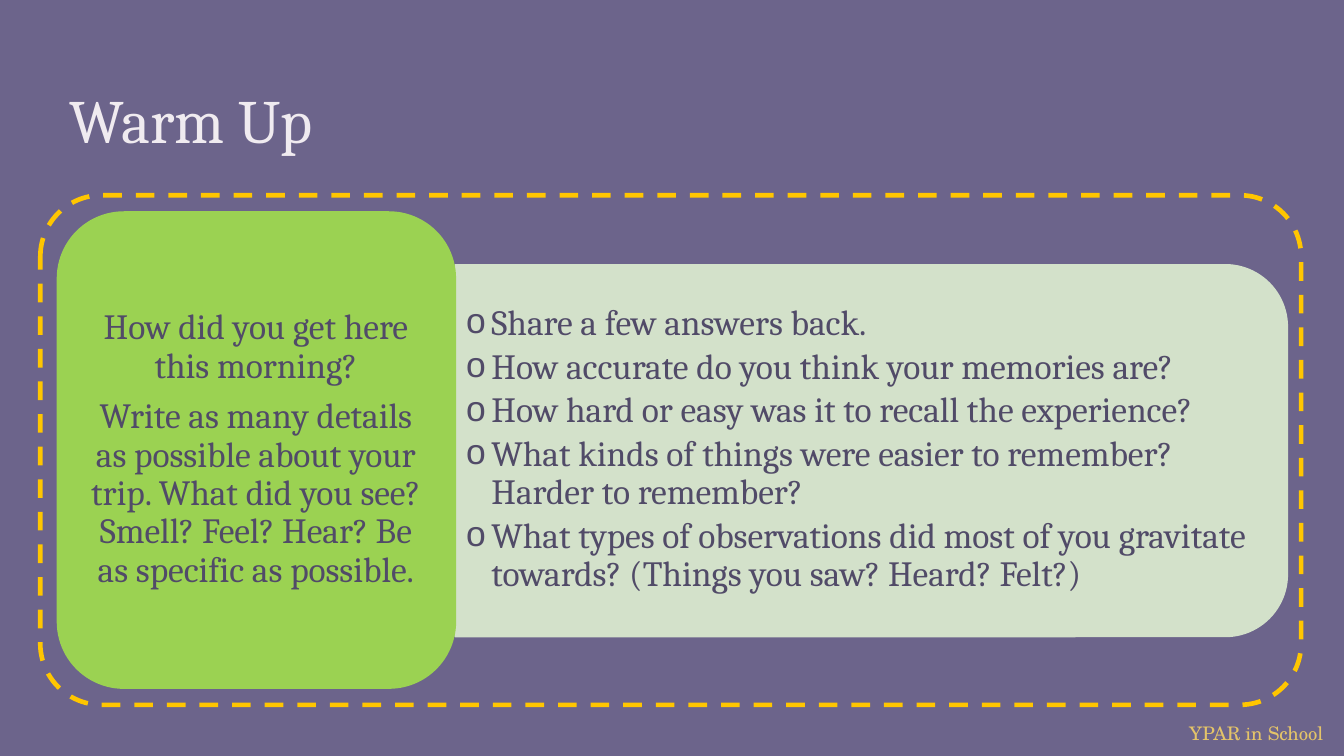
from lxml.etree import SubElement
from pptx import Presentation
from pptx.dml.color import RGBColor
from pptx.enum.dml import MSO_LINE
from pptx.enum.shapes import MSO_SHAPE
from pptx.enum.text import MSO_ANCHOR, MSO_AUTO_SIZE, PP_ALIGN
from pptx.oxml.ns import qn
from pptx.util import Pt

COLORS = {
    "background": "6C648B",
    "title": "F0EBF0",
    "text": "514B68",
    "prompt": "9BD252",
    "questions": "D3E1CA",
    "frame": "FFC600",
    "footer": "E4C469",
}
PROMPTS = [
    "How did you get here this morning?",
    "Write as many details as possible about your trip. What did you see? "
    "Smell? Feel? Hear? Be as specific as possible.",
]
QUESTIONS = [
    "Share a few answers back.",
    "How accurate do you think your memories are?",
    "How hard or easy was it to recall the experience?",
    "What kinds of things were easier to remember? Harder to remember?",
    "What types of observations did most of you gravitate towards? "
    "(Things you saw? Heard? Felt?)",
]
CARD_PARAGRAPH = {"line_spacing": 0.9, "space_before": Pt(0)}
CARD_INSETS = (5.76, 3.6)


def set_attributes(target, values):
    for name, value in values.items():
        setattr(target, name, value)


def rgb(color):
    return RGBColor.from_string(COLORS[color])


class SlideBuilder:
    def __init__(self, slide, font="Cambria"):
        self.slide = slide
        self.font = font
        fill = slide.background.fill
        fill.solid()
        fill.fore_color.rgb = rgb("background")

    def place(self, shape, box):
        names = ("left", "top", "width", "height")
        set_attributes(shape, dict(zip(names, map(Pt, box))))

    def fill_text(self, shape, lines, size, color, anchor, insets, paragraph_format,
                  space_after=0, font=None, bullet=None, indent=0):
        frame = shape.text_frame
        horizontal, vertical = map(Pt, insets)
        set_attributes(frame, {
            "word_wrap": True, "auto_size": MSO_AUTO_SIZE.NONE,
            "vertical_anchor": anchor,
            "margin_left": horizontal, "margin_right": horizontal,
            "margin_top": vertical, "margin_bottom": vertical,
        })
        for index, line in enumerate(lines):
            paragraph = frame.paragraphs[0] if index == 0 else frame.add_paragraph()
            paragraph.text = line
            set_attributes(paragraph, paragraph_format)
            paragraph.space_after = Pt(space_after)
            if bullet:
                properties = paragraph._p.get_or_add_pPr()
                properties.set("marL", str(Pt(indent)))
                properties.set("indent", str(-Pt(indent)))
                SubElement(properties, qn("a:buChar"), char=bullet)
            set_attributes(paragraph.font, {"name": font or self.font, "size": Pt(size)})
            paragraph.font.color.rgb = rgb(color)

    def add_title(self, text, box):
        title = self.slide.shapes.title
        self.place(title, box)
        self.fill_text(title, [text], 33, "title", MSO_ANCHOR.BOTTOM, (7.2, 7.2),
                       {"alignment": PP_ALIGN.LEFT})

    def add_list(self, lines, box):
        body = self.slide.placeholders[1]
        self.place(body, box)
        body.element.getparent().append(body.element)
        self.fill_text(body, lines, 19, "text", MSO_ANCHOR.MIDDLE, CARD_INSETS,
                       CARD_PARAGRAPH, space_after=2.85, bullet="o", indent=13.5)

    def add_text(self, lines, box, **style):
        text_box = self.slide.shapes.add_textbox(*map(Pt, box))
        self.fill_text(text_box, lines, **style)

    def add_card(self, kind, box, color, line_width=1, filled=True,
                 dash=MSO_LINE.SOLID, rotation=0, corner=None):
        card = self.slide.shapes.add_shape(kind, *map(Pt, box))
        card.shadow.inherit = False
        card.rotation = rotation
        if corner is not None:
            card.adjustments[0] = corner
        if filled:
            card.fill.solid()
            card.fill.fore_color.rgb = rgb(color)
        else:
            card.fill.background()
        card.line.color.rgb = rgb(color)
        set_attributes(card.line, {"width": Pt(line_width), "dash_style": dash})


def main():
    presentation = Presentation()
    set_attributes(presentation, {"slide_width": Pt(720), "slide_height": Pt(405)})
    builder = SlideBuilder(presentation.slides.add_slide(presentation.slide_layouts[1]))

    builder.add_text(["YPAR in School"], (630, 383, 90, 19.5), size=10,
                     color="footer", anchor=MSO_ANCHOR.TOP, insets=(7.2, 3.6),
                     paragraph_format={"alignment": PP_ALIGN.LEFT},
                     font="TeX Gyre Schola")
    builder.add_title("Warm Up", (30.25, 36.75, 659, 54))
    builder.add_card(MSO_SHAPE.ROUND_2_SAME_RECTANGLE, (367.2, 18.6, 199, 445.7),
                     "questions", rotation=90)
    builder.add_list(QUESTIONS, (244, 151.2, 435.6, 179.3))
    builder.add_card(MSO_SHAPE.ROUNDED_RECTANGLE, (30.9, 113.7, 213, 254.9), "prompt")
    builder.add_text(PROMPTS, (41, 123.8, 192.3, 234), size=19, color="text",
                     anchor=MSO_ANCHOR.MIDDLE, insets=CARD_INSETS,
                     paragraph_format={**CARD_PARAGRAPH, "alignment": PP_ALIGN.CENTER},
                     space_after=6.65)
    builder.add_card(MSO_SHAPE.ROUNDED_RECTANGLE, (21.6, 104.6, 675.4, 273), "frame",
                     line_width=2.5, filled=False, dash=MSO_LINE.DASH, corner=0.12)
    presentation.save("out.pptx")


if __name__ == "__main__":
    main()
